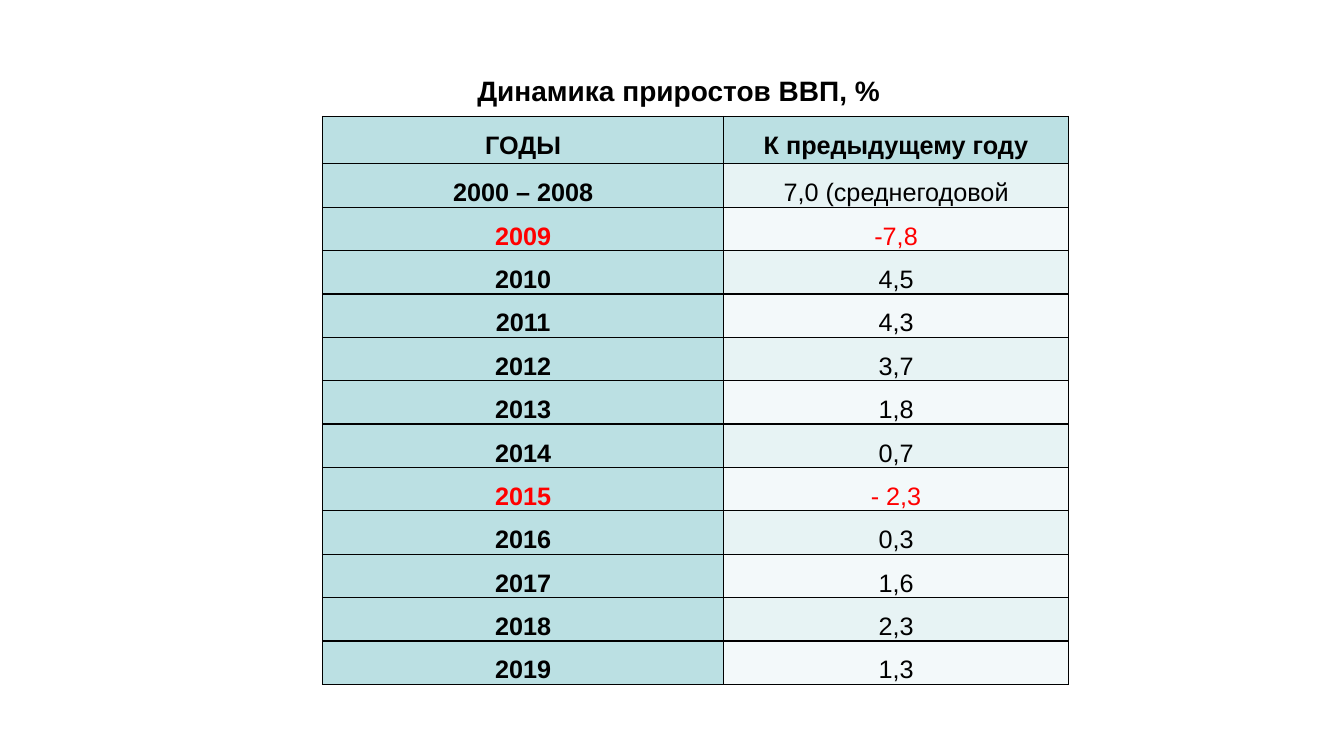
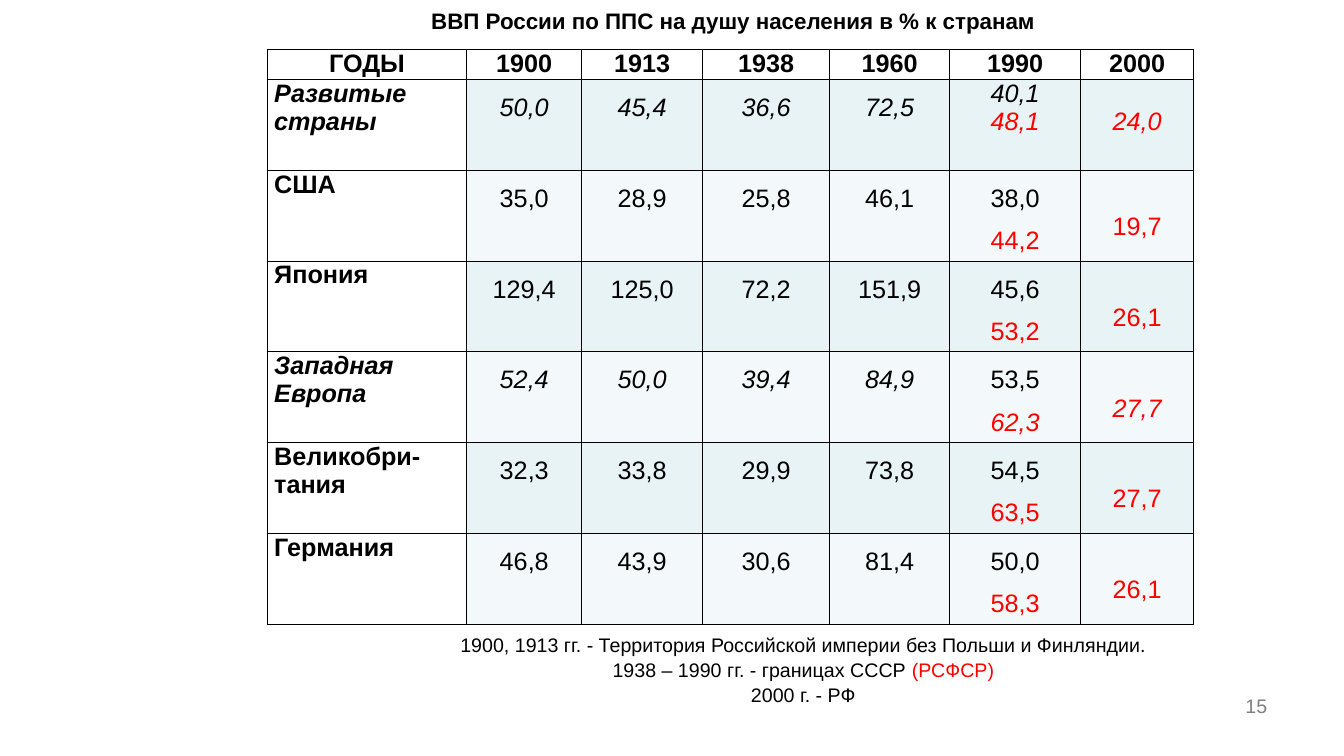
from lxml import etree
from pptx import Presentation, util as u
from pptx.dml.color import RGBColor
from pptx.enum import text as t
from pptx.oxml.ns import qn

WIDE, HIGH = u.Inches(13.33), u.Inches(7.5)
HUES = {"ink": "000000", "red": "FF0000", "head": "BBE0E3",
        "dark": "E7F3F4", "pale": "F3F9FA", "grey": "808080"}
MID, LEFT, RIGHT = t.PP_ALIGN.CENTER, t.PP_ALIGN.LEFT, t.PP_ALIGN.RIGHT

GROWTH = [
    ("2000 – 2008", "7,0 (среднегодовой"), ("2009", "-7,8"), ("2010", "4,5"),
    ("2011", "4,3"), ("2012", "3,7"), ("2013", "1,8"), ("2014", "0,7"),
    ("2015", "- 2,3"), ("2016", "0,3"), ("2017", "1,6"), ("2018", "2,3"),
    ("2019", "1,3"),
]
YEARS = ["ГОДЫ", "1900", "1913", "1938", "1960", "1990", "2000"]
LANDS = [
    ("Развитые страны", "50,0", "45,4", "36,6", "72,5", "40,1", "48,1", "24,0"),
    ("США", "35,0", "28,9", "25,8", "46,1", "38,0", "44,2", "19,7"),
    ("Япония", "129,4", "125,0", "72,2", "151,9", "45,6", "53,2", "26,1"),
    ("Западная Европа", "52,4", "50,0", "39,4", "84,9", "53,5", "62,3", "27,7"),
    ("Великобри- тания", "32,3", "33,8", "29,9", "73,8", "54,5", "63,5", "27,7"),
    ("Германия", "46,8", "43,9", "30,6", "81,4", "50,0", "58,3", "26,1"),
]
GROUPS = ("Развитые страны", "Западная Европа")


def across(share):
    return round(WIDE * share / 100)


def down(share):
    return round(HIGH * share / 100)


def place(box):
    x, y, w, h = box
    return across(x), down(y), across(w), down(h)


def style(font, size, hue="ink", bold=False, slant=False):
    font.name, font.size = "Arial", u.Pt(size)
    font.bold, font.italic = bold, slant
    font.color.rgb = RGBColor.from_string(HUES[hue])


def add_title(slide, words, size, box):
    title = slide.shapes.title
    title.left, title.top, title.width, title.height = place(box)
    frame = title.text_frame
    frame.text = words
    frame.auto_size = t.MSO_AUTO_SIZE.NONE
    frame.vertical_anchor = t.MSO_ANCHOR.MIDDLE
    line = frame.paragraphs[0]
    line.alignment = MID
    style(line.font, size, bold=True)


def add_text(slide, box, lines, align, hue="ink"):
    frame = slide.shapes.add_textbox(*place(box)).text_frame
    frame.word_wrap = True
    for i, runs in enumerate(lines):
        line = frame.paragraphs[0] if i == 0 else frame.add_paragraph()
        line.alignment, line.space_after = align, u.Pt(1)
        style(line.font, 14, hue)
        for words, tint in runs:
            run = line.add_run()
            run.text = words
            if tint != hue:
                style(run.font, 14, tint)


def add_grid(slide, x, y, wide, cols, rows):
    size = sum(rows)
    frame = slide.shapes.add_table(len(rows), len(cols),
                                   *place((x, y, wide, size)))
    table = frame.table
    table.first_row = table.horz_banding = False
    for col, part in zip(table.columns, cols):
        col.width = across(wide * part / sum(cols))
    for row, part in zip(table.rows, rows):
        row.height = down(part)
    return table


def edge(cell):
    props = cell._tc.get_or_add_tcPr()
    for i, side in enumerate(("lnL", "lnR", "lnT", "lnB")):
        line = etree.Element(qn("a:" + side), w=str(u.Pt(1)))
        fill = etree.SubElement(line, qn("a:solidFill"))
        etree.SubElement(fill, qn("a:srgbClr"), val=HUES["ink"])
        props.insert(i, line)


def put(cell, lines, fill=None, align=MID, space=1.5, top=0, bold=False):
    cell.margin_left = cell.margin_right = u.Inches(0.07)
    cell.margin_top, cell.margin_bottom = u.Inches(top), 0
    if fill:
        cell.fill.solid()
        cell.fill.fore_color.rgb = RGBColor.from_string(HUES[fill])
    else:
        cell.fill.background()
    edge(cell)
    frame = cell.text_frame
    for i, (words, hue, slant) in enumerate(lines):
        line = frame.paragraphs[0] if i == 0 else frame.add_paragraph()
        line.text = words
        line.alignment, line.line_spacing = align, space
        style(line.font, 18, hue, bold, slant)


def band(row):
    return "dark" if row % 2 else "pale"


def growth_slide(deck):
    slide = deck.slides.add_slide(deck.slide_layouts[5])
    table = add_grid(slide, 24, 15.4, 55.5, (3.98, 3.42),
                     [6.27] + [5.74] * len(GROWTH))
    for col, words in enumerate(("ГОДЫ", "К предыдущему году")):
        put(table.cell(0, col), [(words, "ink", False)], "head",
            top=0.01, bold=True)
    for row, (year, value) in enumerate(GROWTH, 1):
        hue = "red" if value.startswith("-") else "ink"
        put(table.cell(row, 0), [(year, hue, False)], "head",
            top=0.01, bold=True)
        put(table.cell(row, 1), [(value, hue, False)], band(row), top=0.01)
    add_title(slide, "Динамика приростов ВВП, %", 20, (30.5, 9.07, 40, 5.87))


def lands_slide(deck):
    slide = deck.slides.add_slide(deck.slide_layouts[5])
    add_text(slide, (29.55, 83.07, 60.45, 14.27), [
        [("1900, 1913 гг. - Территория Российской империи без Польши "
          "и Финляндии.", "ink")],
        [("1938 – 1990 гг. - границах СССР ", "ink"), ("(РСФСР)", "red")],
        [("2000 г. - РФ", "ink")],
    ], MID)
    add_text(slide, (71.7, 91.07, 23.33, 6.93), [[("15", "grey")]],
             RIGHT, "grey")
    table = add_grid(slide, 19.88, 6.53, 68.93,
                     (1.98, 1.14, 1.2, 1.26, 1.19, 1.3, 1.12),
                     [4] + [12] * len(LANDS))
    for col, year in enumerate(YEARS):
        put(table.cell(0, col), [(year, "ink", False)], space=1, bold=True)
    for row, (land, *past, union, russia, last) in enumerate(LANDS, 1):
        slant = land in GROUPS
        space = 1 if row == 1 else 1.5
        put(table.cell(row, 0), [(land, "ink", slant)], align=LEFT,
            space=1, bold=True)
        for col, value in enumerate(past, 1):
            put(table.cell(row, col), [(value, "ink", slant)], band(row))
        put(table.cell(row, 5),
            [(union, "ink", row == 1), (russia, "red", slant)],
            band(row), space=space)
        put(table.cell(row, 6), [(last, "red", slant)], band(row),
            space=space, top=0.28)
    add_title(slide, "ВВП России по ППС на душу населения в % к странам", 16,
              (29.55, 0, 50, 5.33))


def main():
    deck = Presentation()
    deck.slide_width, deck.slide_height = WIDE, HIGH
    growth_slide(deck)
    lands_slide(deck)
    deck.save("out.pptx")


if __name__ == "__main__":
    main()
